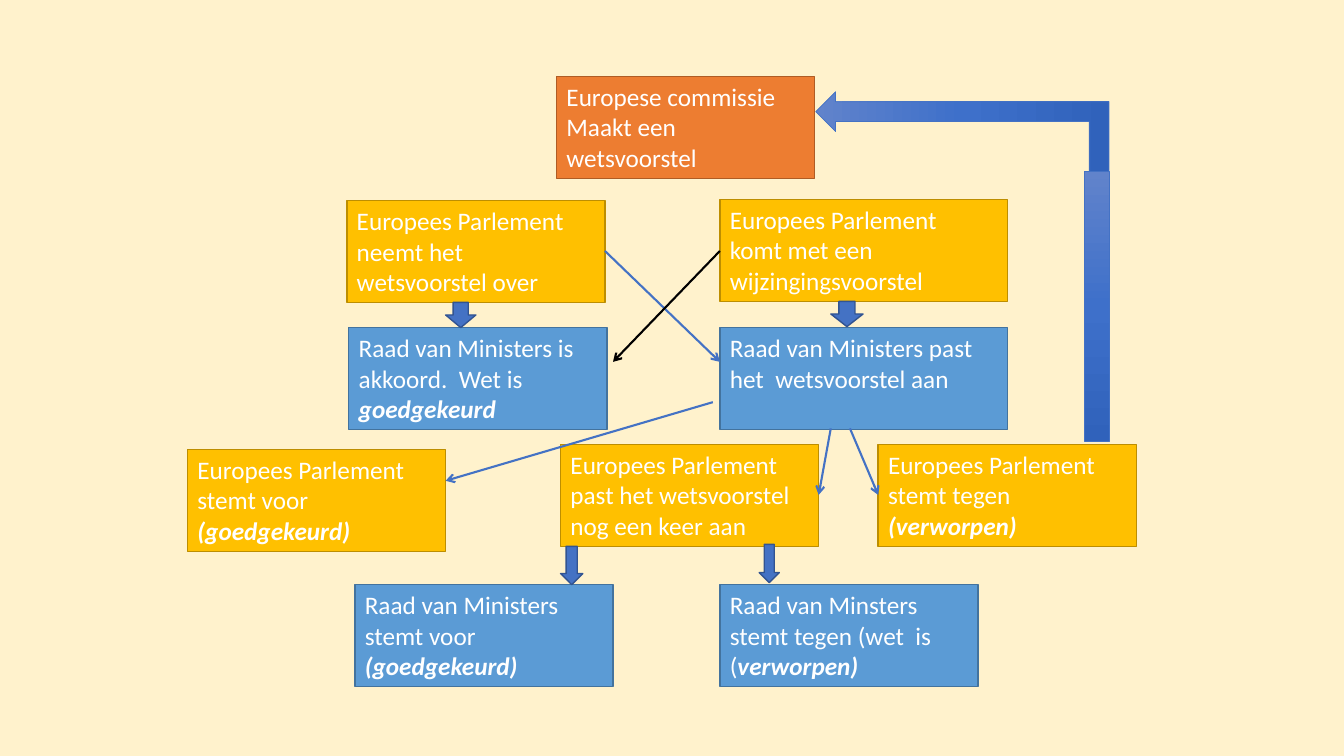
"""Build a flow chart of the European law-making process."""
from copy import deepcopy

from lxml import etree
from pptx import Presentation
from pptx.dml.color import RGBColor
from pptx.enum.shapes import MSO_CONNECTOR, MSO_SHAPE
from pptx.oxml.ns import qn
from pptx.util import Inches, Pt

RECTANGLE = MSO_SHAPE.RECTANGLE
DOWN_ARROW = MSO_SHAPE.DOWN_ARROW
BENT_ARROW = MSO_SHAPE.BENT_UP_ARROW
STRAIGHT = MSO_CONNECTOR.STRAIGHT

ORANGE, YELLOW, BLUE = ("ED7D31", "AF5C24"), ("FFC000", "BD8E00"), ("5B9BD5", "43739E")
ARROW_FILL, ARROW_EDGE = "4472C4", "325491"
RETURN_SHADES = ((0, "6183CB"), (0.5, "3E70CA"), (1, "3062BB"))

BOX_WIDTH, WIDE_BOX, BOX_HEIGHT = 2.56, 2.85, 1.01
RIGHT_COLUMN = 7.14
PARLIAMENT_ROW, COUNCIL_ROW, VOTE_ROW, FINAL_ROW = 1.98, 3.25, 4.41, 5.8


def color(value):
    return RGBColor.from_string(value)


def outline(shape, edge, width):
    shape.line.color.rgb = color(edge)
    shape.line.width = Pt(width)


deck = Presentation()
deck.slide_width, deck.slide_height = Inches(13.33), Inches(7.5)
page = deck.slides.add_slide(deck.slide_layouts[6])
page.background.fill.solid()
page.background.fill.fore_color.rgb = color("FFF2CC")

steps = [
    (5.52, 0.76, BOX_WIDTH, ORANGE, ["Europese commissie", "Maakt een wetsvoorstel"], ""),
    (RIGHT_COLUMN, PARLIAMENT_ROW, WIDE_BOX, YELLOW,
     ["Europees Parlement  komt met een wijzingingsvoorstel"], ""),
    (3.44, PARLIAMENT_ROW + 0.01, BOX_WIDTH, YELLOW,
     ["Europees Parlement neemt het wetsvoorstel over"], ""),
    (3.46, COUNCIL_ROW, BOX_WIDTH, BLUE,
     ["Raad van Ministers is akkoord.  Wet is "], "goedgekeurd"),
    (RIGHT_COLUMN, COUNCIL_ROW, WIDE_BOX, BLUE,
     ["Raad van Ministers past het  wetsvoorstel aan"], ""),
    (1.86, VOTE_ROW + 0.05, BOX_WIDTH, YELLOW,
     ["Europees Parlement stemt voor "], "(goedgekeurd)"),
    (5.56, VOTE_ROW, BOX_WIDTH, YELLOW,
     ["Europees Parlement past het wetsvoorstel nog een keer aan"], ""),
    (8.71, VOTE_ROW, BOX_WIDTH, YELLOW,
     ["Europees Parlement stemt tegen "], "(verworpen)"),
    (3.52, FINAL_ROW, BOX_WIDTH, BLUE,
     ["Raad van Ministers stemt voor "], "(goedgekeurd)"),
    (RIGHT_COLUMN, FINAL_ROW, BOX_WIDTH, BLUE,
     ["Raad van Minsters stemt tegen (wet  is ("], "verworpen)"),
]
for left, top, width, (fill, edge), lines, verdict in steps:
    box = page.shapes.add_textbox(
        Inches(left), Inches(top), Inches(width), Inches(BOX_HEIGHT))
    box.fill.solid()
    box.fill.fore_color.rgb = color(fill)
    outline(box, edge, 1)
    frame = box.text_frame
    frame.word_wrap = True
    frame.text = "\n".join(lines)
    if verdict:
        span = frame.paragraphs[-1].add_run()
        span.text = verdict
        span.font.bold = span.font.italic = True
    for para in frame.paragraphs:
        para.font.name = "Calibri"
        para.font.size = Pt(18)
        para.font.color.rgb = color("FFFFFF")

down_arrows = [
    (4.42, 3, 0.3, 0.25),
    (8.24, 2.99, 0.32, 0.25),
    (5.56, 5.42, 0.22, 0.38),
    (7.53, 5.4, 0.2, 0.38),
]
for bounds in down_arrows:
    arrow = page.shapes.add_shape(DOWN_ARROW, *map(Inches, bounds))
    arrow.shadow.inherit = False
    arrow.fill.solid()
    arrow.fill.fore_color.rgb = color(ARROW_FILL)
    outline(arrow, ARROW_EDGE, 1)

links = [
    (6, 2.49, 7.14, 3.59, ARROW_FILL),
    (7.14, 2.49, 6.08, 3.59, "000000"),
    (7.07, 3.99, 4.42, 4.77, ARROW_FILL),
    (8.24, 4.25, 8.12, 4.91, ARROW_FILL),
    (8.43, 4.25, 8.71, 4.91, ARROW_FILL),
]
for *ends, shade in links:
    link = page.shapes.add_connector(STRAIGHT, *map(Inches, ends))
    outline(link, shade, 1.5)
    etree.SubElement(link.line._get_or_add_ln(), qn("a:tailEnd"), type="arrow")
    etree.SubElement(link._element.spPr, qn("a:effectLst"))

return_parts = [
    (BENT_ARROW, (9.15, -0.15, 0.79, 2.91), 270),
    (RECTANGLE, (10.76, 1.7, 0.24, 2.68), 0),
]
for kind, bounds, rotation in return_parts:
    part = page.shapes.add_shape(kind, *map(Inches, bounds))
    part.rotation = rotation
    part.shadow.inherit = False
    part.fill.gradient()
    part.fill.gradient_angle = 270
    stop_list = part._element.xpath(".//a:gsLst")[0]
    stop_list.insert(1, deepcopy(stop_list[0]))
    for stop, (position, shade) in zip(part.fill.gradient_stops, RETURN_SHADES):
        stop.position = position
        stop.color.rgb = color(shade)
    outline(part, ARROW_FILL, 0.5)

deck.save("out.pptx")
